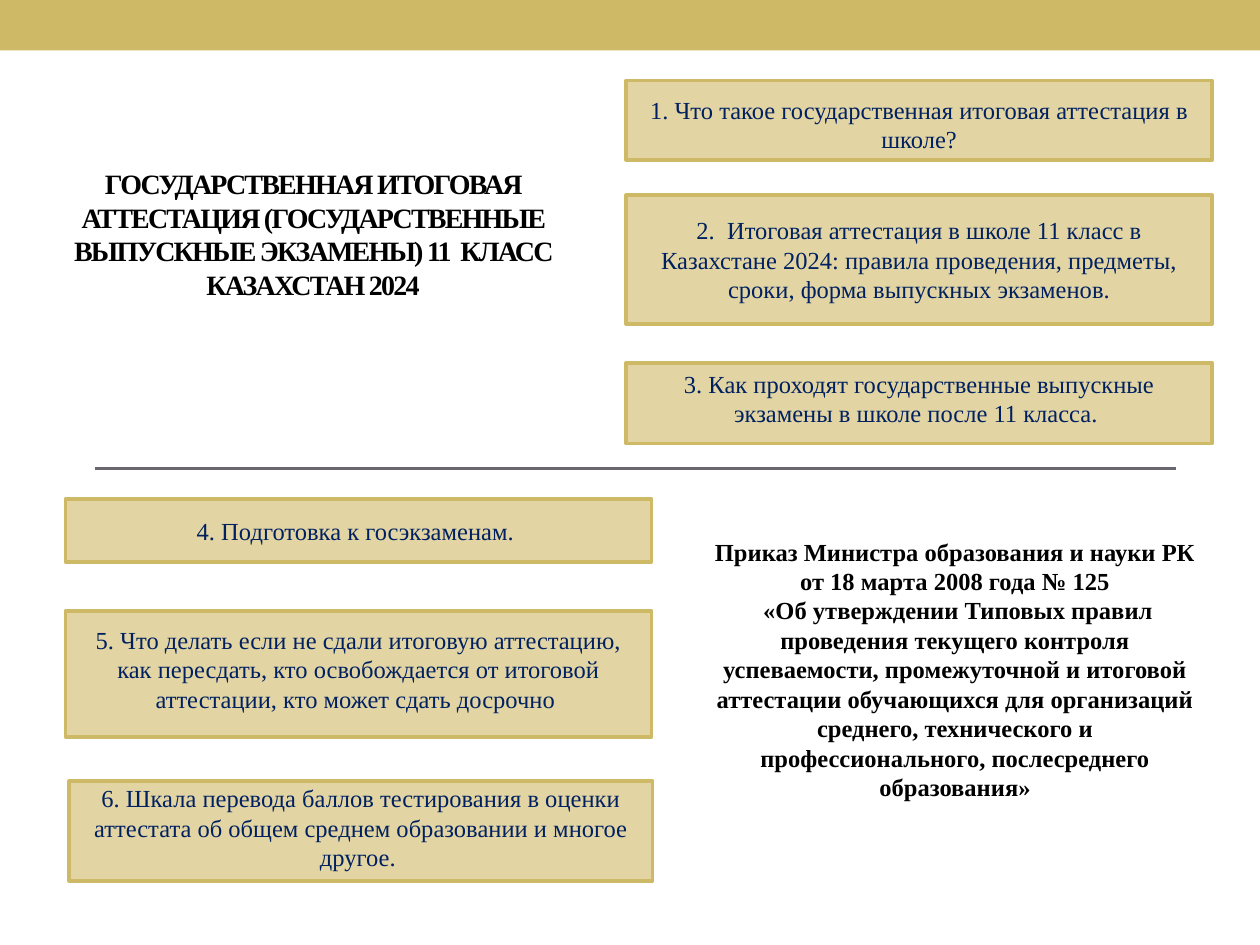
from pptx import Presentation
from pptx.dml.color import RGBColor
from pptx.enum import shapes, text
from pptx.oxml.ns import qn
from pptx.util import Inches, Pt
from lxml import etree

GOLD, SAND, NAVY, GREY, BLACK = "CEB966", "E2D5A3", "002060", "69676D", "000000"

TOPICS = [
    (4.97, 0.64, 4.65, 0.63, 0.03, "1. Что такое государственная итоговая аттестация в школе?"),
    (4.97, 1.55, 4.65, 1.02, 0, "2.  Итоговая аттестация в школе 11 класс в Казахстане 2024: "
     "правила проведения, предметы, сроки, форма выпускных экзаменов."),
    (4.97, 2.88, 4.65, 0.64, -0.04, "3. Как проходят государственные выпускные экзамены в школе "
     "после 11 класса. "),
    (0.52, 3.96, 4.65, 0.5, 0, "4. Подготовка к госэкзаменам. "),
    (0.52, 4.85, 4.65, 1, -0.04, "5. Что делать если не сдали итоговую аттестацию, как пересдать, "
     "кто освобождается от итоговой аттестации, кто может сдать досрочно "),
    (0.55, 6.2, 4.63, 0.79, -0.03, "6. Шкала перевода баллов тестирования в оценки аттестата "
     "об общем среднем образовании и многое другое. "),
]
TITLE = ("ГОСУДАРСТВЕННАЯ ИТОГОВАЯ АТТЕСТАЦИЯ (ГОСУДАРСТВЕННЫЕ ВЫПУСКНЫЕ ЭКЗАМЕНЫ) "
         "11  КЛАСС КАЗАХСТАН 2024")
ORDER = ("Приказ Министра образования и науки РК от 18 марта 2008 года № 125\n"
         " «Об утверждении Типовых правил проведения текущего контроля успеваемости, "
         "промежуточной и итоговой аттестации обучающихся для организаций среднего, "
         "технического и профессионального, послесреднего образования»")


def rgb(value):
    """Return the colour for a hex string."""
    return RGBColor.from_string(value)


def write(sp, content, size, color, bold=False, spacing=0):
    """Fill a shape with centred, wrapped text."""
    tf = sp.text_frame
    tf.word_wrap = True
    tf.text = content
    for p in tf.paragraphs:
        p.alignment = text.PP_ALIGN.CENTER
        for r in p.runs:
            r.font.name = "Times New Roman"
            r.font.size = Pt(size)
            r.font.bold = bold
            r.font.color.rgb = rgb(color)
            if spacing:
                r.font._element.set("spc", str(spacing))
    return tf


def add_box(s, x, y, w, h, fill, line=None):
    """Add a filled rectangle with an optional outline."""
    sp = s.shapes.add_shape(shapes.MSO_SHAPE.RECTANGLE, Inches(x), Inches(y), Inches(w), Inches(h))
    sp.shadow.inherit = False
    sp.fill.solid()
    sp.fill.fore_color.rgb = rgb(fill)
    if line:
        sp.line.color.rgb = rgb(line)
        sp.line.width = Pt(2.08)
    else:
        sp.line.fill.background()
    return sp


def add_topic(s, x, y, w, h, shift, content):
    """Add a topic box whose text sits a little off the middle."""
    tf = write(add_box(s, x, y, w, h, SAND, GOLD), content, 14, NAVY)
    tf.vertical_anchor = text.MSO_ANCHOR.MIDDLE
    tf.margin_top = Inches(0.05 + shift)
    tf.margin_bottom = Inches(0.05 - shift)


def add_text(s, x, y, w, h, content, size, spacing=0):
    """Add a bold black text box."""
    sp = s.shapes.add_textbox(Inches(x), Inches(y), Inches(w), Inches(h))
    return write(sp, content, size, BLACK, True, spacing)


def add_rule(s, x1, x2, y):
    """Add a horizontal dividing line."""
    sp = s.shapes.add_connector(shapes.MSO_CONNECTOR.STRAIGHT,
                                Inches(x1), Inches(y), Inches(x2), Inches(y))
    sp.line.color.rgb = rgb(GREY)
    sp.line.width = Pt(1.5)
    etree.SubElement(sp._element.spPr, qn("a:effectLst"))


def main():
    """Build and save the slide."""
    prs = Presentation()
    prs.slide_width, prs.slide_height = Inches(10), Inches(7.5)
    s = prs.slides.add_slide(prs.slide_layouts[6])
    add_box(s, 0, 0, 10, 0.4, GOLD)
    add_rule(s, 0.75, 9.33, 3.72)
    tf = add_text(s, 0.2, 1.19, 4.57, 1.5, TITLE, 16, -100)
    tf.vertical_anchor = text.MSO_ANCHOR.BOTTOM
    tf.margin_bottom = Inches(0.3)
    for topic in TOPICS:
        add_topic(s, *topic)
    add_text(s, 5.55, 4.21, 4.06, 2.46, ORDER, 14)
    prs.save("out.pptx")


if __name__ == "__main__":
    main()
